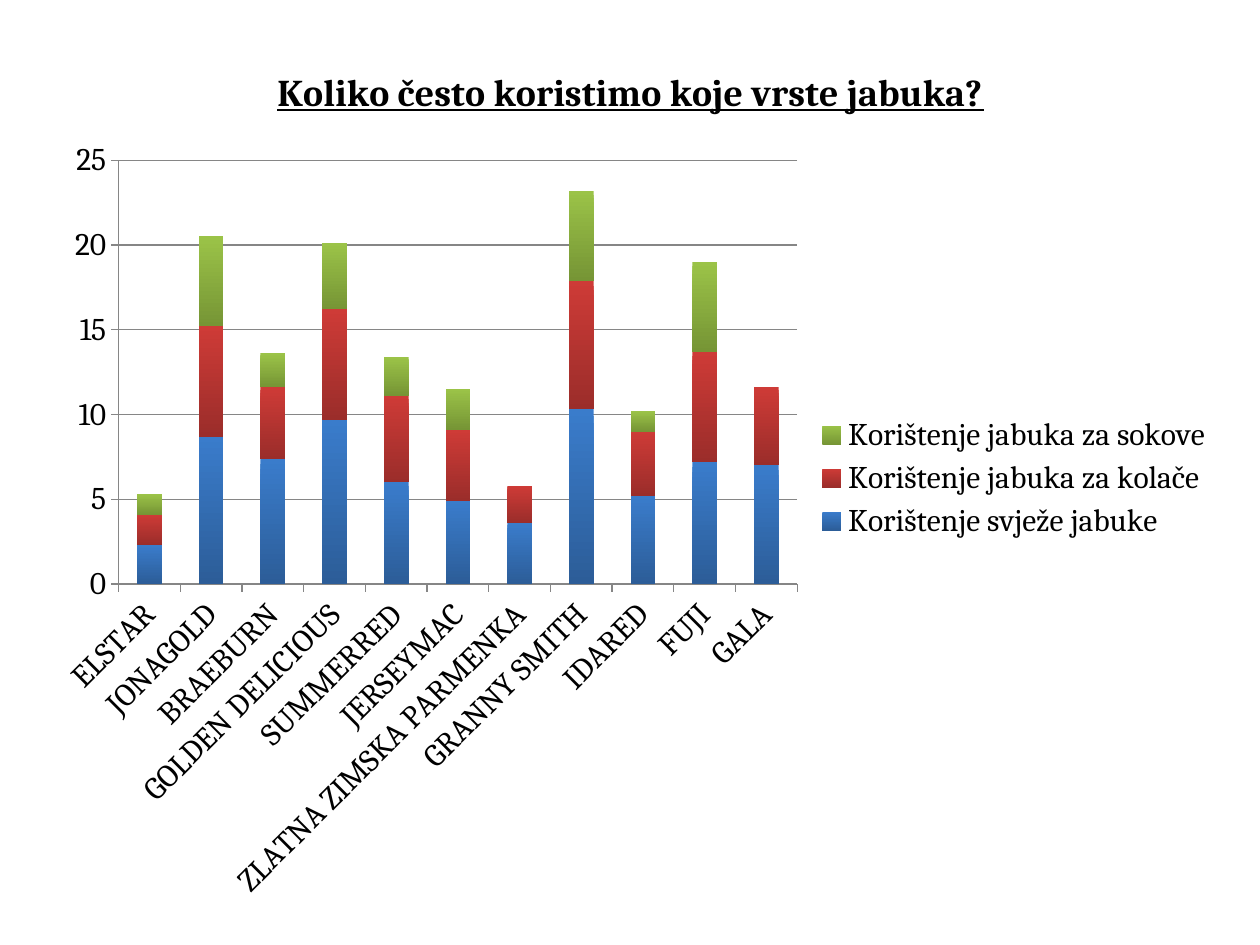
import pptx
import pptx.chart.data
import pptx.dml.color
import pptx.enum.chart
import pptx.oxml
import pptx.util
from pptx.util import Inches

FONT = "Cambria"
COLORS = {"text": "000000", "line": "868686"}
TITLE = "Koliko često koristimo koje vrste jabuka?"
APPLES = [
    "ELSTAR", "JONAGOLD", "BRAEBURN", "GOLDEN DELICIOUS", "SUMMERRED", "JERSEYMAC",
    "ZLATNA ZIMSKA PARMENKA", "GRANNY SMITH", "IDARED", "FUJI", "GALA",
]
USES = [
    ("Korištenje svježe jabuke", ("3A7CCB", "2C5D98"),
     [2.3, 8.7, 7.4, 9.7, 6, 4.9, 3.6, 10.3, 5.2, 7.2, 7]),
    ("Korištenje jabuka za kolače", ("CE3B37", "9B2D2A"),
     [1.8, 6.5, 4.2, 6.5, 5.1, 4.2, 2.2, 7.6, 3.8, 6.5, 4.6]),
    ("Korištenje jabuka za sokove", ("9BC348", "769535"),
     [1.2, 5.3, 2, 3.9, 2.3, 2.4, 0, 5.3, 1.2, 5.3, 0]),
]


def rgb(value):
    """Return a colour object for a hex string."""
    return pptx.dml.color.RGBColor.from_string(value)


def style_font(font, size):
    """Apply the chart's typeface and text colour at a size in points."""
    font.name = FONT
    font.size = pptx.util.Pt(size)
    font.color.rgb = rgb(COLORS["text"])


def style_line(line):
    """Make an axis or grid line thin and grey."""
    line.color.rgb = rgb(COLORS["line"])
    line.width = pptx.util.Pt(0.75)


def place_plot(chart, x, y, width, height):
    """Fix the inner plot area as fractions of the chart box."""
    plot_area = chart._chartSpace.chart.plotArea
    for old_layout in plot_area.findall(pptx.oxml.ns.qn("c:layout")):
        plot_area.remove(old_layout)
    values = {"x": x, "y": y, "w": width, "h": height}
    modes = "".join(f'<c:{name}Mode val="edge"/>' for name in ("x", "y"))
    sizes = "".join(f'<c:{name} val="{value}"/>' for name, value in values.items())
    plot_area.insert(0, pptx.oxml.parse_xml(
        f'<c:layout {pptx.oxml.ns.nsdecls("c")}><c:manualLayout>'
        f'<c:layoutTarget val="inner"/>{modes}{sizes}</c:manualLayout></c:layout>'))


def add_title(chart):
    """Write the underlined chart title."""
    chart.has_title = True
    chart.chart_title.include_in_layout = False
    run = chart.chart_title.text_frame.paragraphs[0].add_run()
    run.text = TITLE
    style_font(run.font, 21.6)
    run.font.bold = True
    run.font.underline = True


def style_axes(chart):
    """Format both axes, the gridlines and the slanted apple names."""
    for axis in (chart.category_axis, chart.value_axis):
        style_font(axis.tick_labels.font, 18)
        style_line(axis.format.line)
        axis.major_tick_mark = pptx.enum.chart.XL_TICK_MARK.OUTSIDE
        axis.minor_tick_mark = pptx.enum.chart.XL_TICK_MARK.NONE
    body = chart.category_axis._element.txPr.find(pptx.oxml.ns.qn("a:bodyPr"))
    body.set("rot", str(-45 * 60000))
    body.set("vert", "horz")
    chart.value_axis.minimum_scale = 0
    chart.value_axis.maximum_scale = 25
    chart.value_axis.major_unit = 5
    chart.value_axis.has_major_gridlines = True
    style_line(chart.value_axis.major_gridlines.format.line)


def style_bars(plot):
    """Give each stacked series a gradient from light to dark."""
    plot.gap_width = 150
    plot.overlap = 100
    plot.vary_by_categories = False
    for series, (_, shades, _) in zip(plot.series, USES):
        fill = series.format.fill
        fill.gradient()
        fill.gradient_angle = 270
        for stop, shade in zip(fill.gradient_stops, shades):
            stop.color.rgb = rgb(shade)
        series.format.line.fill.background()
        series.invert_if_negative = False


def add_usage_chart(slide, left, top, width, height):
    """Add the stacked chart of apple uses in the given box."""
    data = pptx.chart.data.CategoryChartData()
    data.categories = APPLES
    for name, _, values in USES:
        data.add_series(name, values)
    chart = slide.shapes.add_chart(
        pptx.enum.chart.XL_CHART_TYPE.COLUMN_STACKED, left, top, width, height, data).chart
    style_font(chart.font, 18)
    add_title(chart)
    style_axes(chart)
    style_bars(chart.plots[0])
    chart.has_legend = True
    chart.legend.position = pptx.enum.chart.XL_LEGEND_POSITION.RIGHT
    chart.legend.include_in_layout = False
    style_font(chart.legend.font, 18)
    place_plot(chart, 0.07, 0.14, 0.57, 0.48)


def main():
    """Build and save the presentation."""
    presentation = pptx.Presentation()
    presentation.slide_width = Inches(10)
    presentation.slide_height = Inches(7.5)
    slide = presentation.slides.add_slide(presentation.slide_layouts[6])
    add_usage_chart(slide, Inches(0.28), Inches(0.29), Inches(9.45), Inches(7.01))
    presentation.save("out.pptx")


if __name__ == "__main__":
    main()
